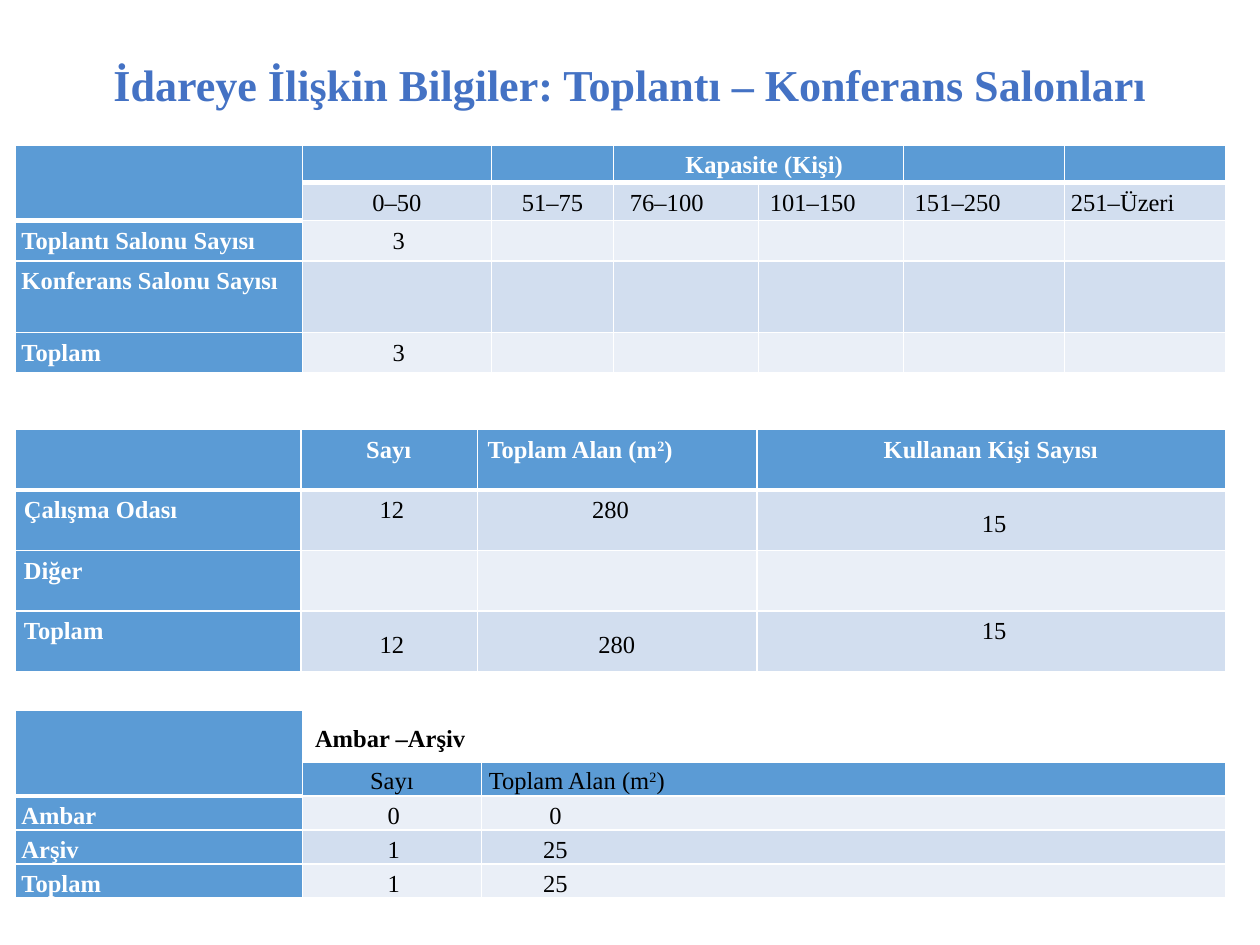
from lxml import etree
from pptx import Presentation
from pptx.dml.color import RGBColor
from pptx.enum.text import MSO_ANCHOR, MSO_AUTO_SIZE, PP_ALIGN
from pptx.oxml.ns import qn
from pptx.util import Inches, Pt

LEFT, MID = PP_ALIGN.LEFT, PP_ALIGN.CENTER
TOP, CENTRE = MSO_ANCHOR.TOP, MSO_ANCHOR.MIDDLE
NO_FIT = MSO_AUTO_SIZE.NONE
TITLE = RGBColor(0x44, 0x72, 0xC4)
BLUE = RGBColor(0x5B, 0x9B, 0xD5)
DARK = RGBColor(0xD2, 0xDE, 0xEF)
PALE = RGBColor(0xEA, 0xEF, 0xF7)
WHITE = RGBColor(0xFF, 0xFF, 0xFF)
BLACK = RGBColor(0x00, 0x00, 0x00)
FONT = "Times New Roman"


def write(cell, text, align, indent, color, bold):
    """Fill a cell with one paragraph; a ² becomes a raised 2."""
    para = cell.text_frame.paragraphs[0]
    para.alignment = align
    para.line_spacing = 1.07
    props = para._p.get_or_add_pPr()
    props.set("marL", str(Inches(indent)))
    props.set("indent", "0")
    if not text:
        end = etree.SubElement(para._p, qn("a:endParaRPr"))
        end.set("sz", "1400")
    for part in text.replace("²", "|2|").split("|") if text else []:
        run = para.add_run()
        run.text = part
        run.font.name = FONT
        run.font.size = Pt(14)
        run.font.bold = bold
        run.font.color.rgb = color
        if part == "2":
            run.font._element.set("baseline", "30000")


def build(top, widths, heights, rows, fills, pads, merges=(), head=WHITE):
    """Add a table; a cell is a centred text or (text, alignment, indent)."""
    frame = slide.shapes.add_table(len(rows), len(widths), Inches(0.12), Inches(top),
                                   Inches(sum(widths)), Inches(sum(heights)))
    table = frame.table
    for col, width in zip(table.columns, widths):
        col.width = Inches(width)
    for row, height in zip(table.rows, heights):
        row.height = Inches(height)
    for (r1, c1), (r2, c2) in merges:
        table.cell(r1, c1).merge(table.cell(r2, c2))
    for r, row in enumerate(rows):
        for c, entry in enumerate(row):
            cell = table.cell(r, c)
            cell.margin_left, cell.margin_right = (Inches(pad) for pad in pads)
            cell.margin_top, cell.margin_bottom = Inches(0.04), 0
            cell.vertical_anchor = TOP
            depth = 2 if merges and c == 0 else 1
            heavy = {"T": r == depth, "B": r < depth}
            for side in "LRTB":
                line = etree.SubElement(cell._tc.get_or_add_tcPr(), qn("a:ln" + side))
                line.set("w", str(Pt(3 if heavy.get(side) else 1)))
                solid = etree.SubElement(line, qn("a:solidFill"))
                etree.SubElement(solid, qn("a:srgbClr")).set("val", str(WHITE))
            cell.fill.solid()
            cell.fill.fore_color.rgb = BLUE if c == 0 else fills[r]
            if isinstance(entry, str):
                entry = (entry, LEFT if c == 0 else MID, 0)
            color = WHITE if c == 0 else head if r == 0 else BLACK
            write(cell, *entry, color, r == 0 or c == 0)
    return table


deck = Presentation()
deck.slide_width, deck.slide_height = Inches(10), Inches(7.5)
slide = deck.slides.add_slide(deck.slide_layouts[5])

title = slide.shapes.title
title.left, title.top = Inches(0.69), Inches(0.4)
title.width, title.height = Inches(8.62), Inches(0.59)
title.text_frame.text = "İdareye İlişkin Bilgiler: Toplantı – Konferans Salonları"
title.text_frame.auto_size = NO_FIT
title.text_frame.vertical_anchor = CENTRE
para = title.text_frame.paragraphs[0]
para.alignment = MID
para.line_spacing = 0.9
font = para.runs[0].font
font.name, font.size, font.bold = FONT, Pt(25.2), True
font.color.rgb = TITLE

AREA = ("Toplam Alan (m²)", LEFT, 0.01)
BANDS = [BLUE, DARK, PALE, DARK, PALE]
NARROW, WIDE = (0.05, 0.07), (0.07, 0.08)
CORNER = ((0, 0), (1, 0))

# Meeting and conference halls
build(1.15, [2.28, 1.5, 0.97, 1.15, 1.15, 1.28, 1.28], [0.3, 0.3, 0.32, 0.57, 0.32], [
    ["", "", "", ("Kapasite (Kişi)", MID, 0.11), "", "", ""],
    ["", ("0–50", MID, 0.02), ("51–75", MID, 0.02), ("76–100", LEFT, 0.08),
     ("101–150", LEFT, 0.04), ("151–250", LEFT, 0.04), ("251–Üzeri", LEFT, 0)],
    ["Toplantı Salonu Sayısı", ("3", MID, 0.05)] + [""] * 5,
    ["Konferans Salonu Sayısı"] + [""] * 6,
    ["Toplam", ("3", MID, 0.05)] + [""] * 5,
], BANDS, NARROW, [CORNER, ((0, 3), (0, 4))])

# Offices
office = build(3.41, [2.27, 1.4, 2.22, 3.72], [0.48] * 4, [
    ["", "Sayı", AREA, "Kullanan Kişi Sayısı"],
    ["Çalışma Odası", ("12", MID, 0.05), ("280", MID, -0.0), ("15", MID, 0.05)],
    ["Diğer", "", "", ""],
    ["Toplam", ("12", MID, 0.05), "280", ("15", MID, 0.05)],
], BANDS, WIDE)
office.cell(1, 2).margin_right = Inches(0.18)
for r, c in [(1, 3), (3, 1), (3, 2)]:
    office.cell(r, c).vertical_anchor = CENTRE

# Storage and archive
store = build(5.64, [2.28, 1.42, 5.91], [0.4, 0.25, 0.26, 0.26, 0.26], [
    ["", ("Ambar –Arşiv", LEFT, 0.05), ""],
    ["", ("Sayı", MID, 0.02), AREA],
    ["Ambar", ("0", MID, 0.05), ("0", LEFT, 0.49)],
    ["Arşiv", ("1", MID, 0.05), ("25", LEFT, 0.44)],
    ["Toplam", ("1", MID, 0.05), ("25", LEFT, 0.44)],
], [WHITE, BLUE, PALE, DARK, PALE], NARROW, [CORNER], BLACK)
store.cell(0, 1).vertical_anchor = CENTRE

deck.save("out.pptx")
